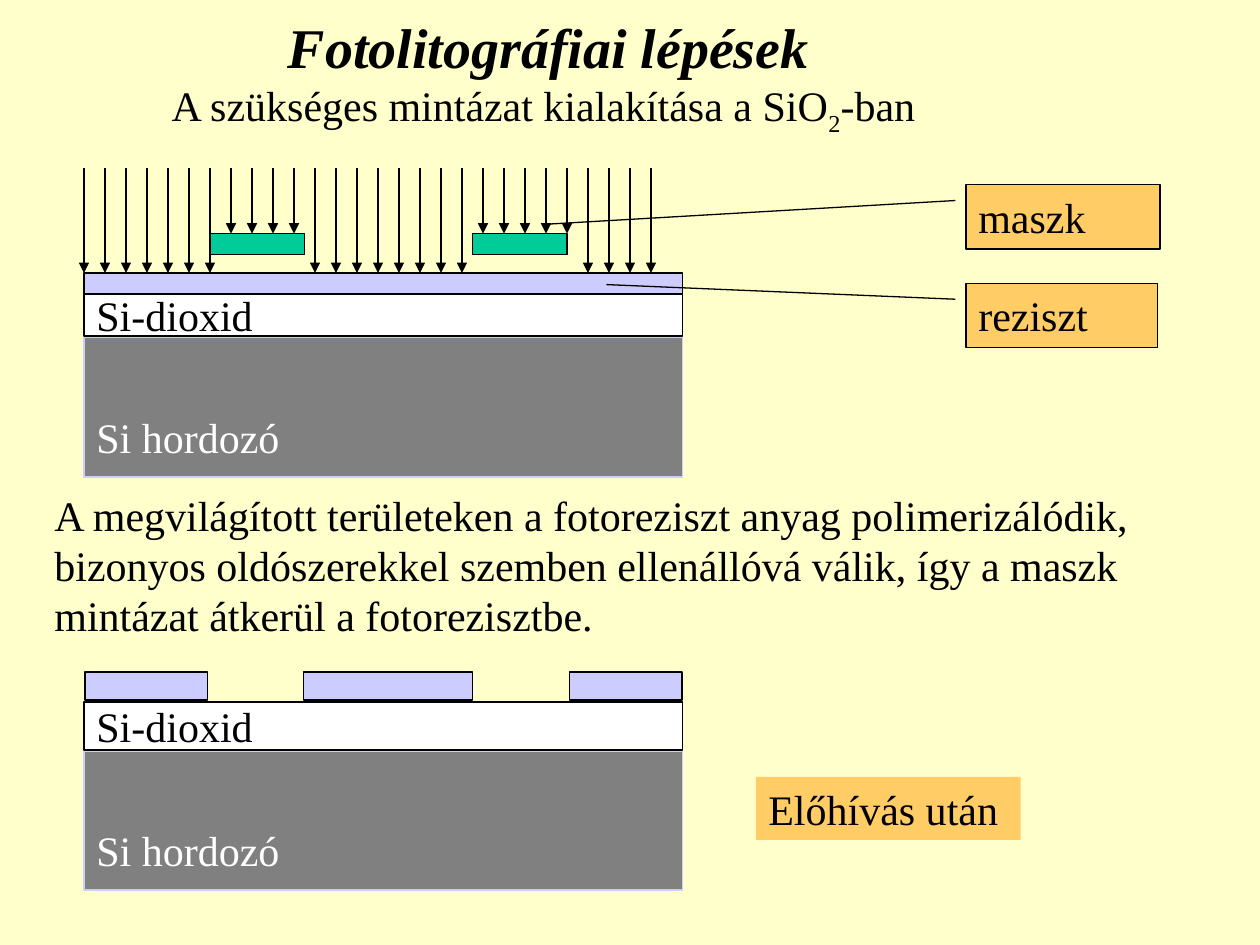
from collections import namedtuple

from lxml.etree import SubElement
from pptx import Presentation
from pptx.dml.color import RGBColor
from pptx.enum.shapes import MSO_CONNECTOR, MSO_SHAPE
from pptx.enum.text import MSO_ANCHOR, PP_ALIGN
from pptx.oxml.ns import qn
from pptx.util import Inches, Pt

CREAM = RGBColor(0xFF, 0xFF, 0xCC)
BLACK = RGBColor(0, 0, 0)
WHITE = RGBColor(0xFF, 0xFF, 0xFF)
GREY = RGBColor(0x80, 0x80, 0x80)
LAVENDER = RGBColor(0xCC, 0xCC, 0xFF)
ORANGE = RGBColor(0xFF, 0xCC, 0x66)
GREEN = RGBColor(0, 0xCC, 0x99)

# Boxes are counted in grid cells: 60 columns by 45 rows, six to the inch.
COLUMNS, ROWS = 60, 45
Box = namedtuple("Box", "left top width height")


def cells(count):
    return Inches(count / 6)


def set_format(target, values):
    for name, value in values.items():
        setattr(target, name, value)


def add_span(para, text, color=BLACK, **extra):
    span = para.add_run()
    span.text = text
    span.font.color.rgb = color
    set_format(span.font, {"name": "Times New Roman", "size": Pt(24), **extra})
    return span


def add_block(page, box, fill, line=BLACK, weight=1, kind=MSO_SHAPE.RECTANGLE):
    block = page.shapes.add_shape(kind, *map(cells, box))
    block.shadow.inherit = False
    block.fill.solid()
    block.fill.fore_color.rgb = fill
    if line is None:
        block.line.fill.background()
    else:
        block.line.color.rgb = line
        block.line.width = Pt(weight)
    return block


def add_label(block, text, color=BLACK, **frame_format):
    frame = block.text_frame
    set_format(frame, {"word_wrap": True, "vertical_anchor": MSO_ANCHOR.TOP,
                       **frame_format})
    para = frame.paragraphs[0]
    para.alignment = PP_ALIGN.LEFT
    add_span(para, text, color)


def add_heading(page, box):
    frame = page.shapes.add_textbox(*map(cells, box)).text_frame
    frame.word_wrap = False
    title, subtitle = frame.paragraphs[0], frame.add_paragraph()
    title.alignment = subtitle.alignment = PP_ALIGN.CENTER
    add_span(title, "Fotolitográfiai lépések",
             size=Pt(32), bold=True, italic=True)
    add_span(subtitle, "A szükséges mintázat kialakítása a SiO")
    subscript = add_span(subtitle, "2")
    subscript.font._element.set("baseline", "-25000")
    add_span(subtitle, "-ban ")


def add_wafer(page, box, oxide_top, oxide_height, resist_height, resist_spans):
    """Stack substrate, oxide and resist; spans are (offset, width) in cells."""
    substrate_height = 6.65
    substrate_top = box.top + box.height - substrate_height
    substrate = add_block(
        page, Box(box.left, substrate_top, box.width, substrate_height),
        GREY, LAVENDER)
    add_label(substrate, "Si hordozó", WHITE,
              vertical_anchor=MSO_ANCHOR.BOTTOM, margin_bottom=Inches(0.12))
    oxide = add_block(
        page, Box(box.left, box.top + oxide_top, box.width, oxide_height), WHITE)
    add_label(oxide, "Si-dioxid",
              vertical_anchor=MSO_ANCHOR.MIDDLE, word_wrap=False)
    for offset, width in resist_spans:
        add_block(page, Box(box.left + offset, box.top, width, resist_height),
                  LAVENDER)


def add_arrow(page, column, top, bottom):
    arrow = page.shapes.add_connector(
        MSO_CONNECTOR.STRAIGHT,
        *map(cells, (column, top, column, bottom)))
    arrow.line.color.rgb = BLACK
    arrow.line.width = Pt(0.75)
    SubElement(arrow.line._get_or_add_ln(), qn("a:tailEnd"), type="triangle")
    SubElement(arrow._element.spPr, qn("a:effectLst"))


def add_exposure(page, box):
    """Draw the light rays, one per column, stopped by two masks or the resist."""
    mask_top = box.top + 5 * box.height / 8
    for offset in (6, 18.5):
        add_block(page, Box(box.left + offset, mask_top, 4.5, 1), GREEN,
                  weight=0.75)
    shaded = {*range(7, 11), *range(19, 24)}
    for step in range(box.width + 1):
        end = mask_top if step in shaded else box.top + box.height
        add_arrow(page, box.left + step, box.top, end)


def add_callout(page, box, text, pointer):
    callout = add_block(page, box, ORANGE, weight=0.75,
                        kind=MSO_SHAPE.LINE_CALLOUT_1)
    for index, value in enumerate(pointer):
        callout.adjustments[index] = value
    add_label(callout, text)


def add_explanation(page, box):
    block = page.shapes.add_textbox(*map(cells, box))
    add_label(block, "A megvilágított területeken a fotoreziszt anyag "
                     "polimerizálódik, bizonyos oldószerekkel szemben ellenállóvá "
                     "válik, így a maszk mintázat átkerül a fotorezisztbe.")


def main():
    deck = Presentation()
    deck.slide_width, deck.slide_height = cells(COLUMNS), cells(ROWS)
    page = deck.slides.add_slide(deck.slide_layouts[6])
    page.background.fill.solid()
    page.background.fill.fore_color.rgb = CREAM

    add_heading(page, Box(7.5, 0.3, 37.26, 6.18))
    add_wafer(page, Box(4, 13, 28.5, 9.72), oxide_top=1, oxide_height=2,
              resist_height=1, resist_spans=[(0, 28.5)])
    add_callout(page, Box(46, 13.5, 9.12, 3.06), "reziszt",
                (0.245, -0.055, 0.017, -1.877))
    add_callout(page, Box(46, 8.8, 9.24, 3.06), "maszk",
                (0.245, -0.054, 0.612, -2.149))
    add_explanation(page, Box(2, 23, 54.5, 7.8))
    add_wafer(page, Box(4, 32, 28.5, 10.4), oxide_top=1.42, oxide_height=2.28,
              resist_height=1.32,
              resist_spans=[(0.06, 5.82), (10.46, 8.04), (23.12, 5.36)])
    add_exposure(page, Box(4, 8, 27, 5))
    result = add_block(page, Box(36, 37, 12.6, 3), ORANGE, line=None)
    add_label(result, "Előhívás után", word_wrap=False)

    deck.save("out.pptx")


if __name__ == "__main__":
    main()
